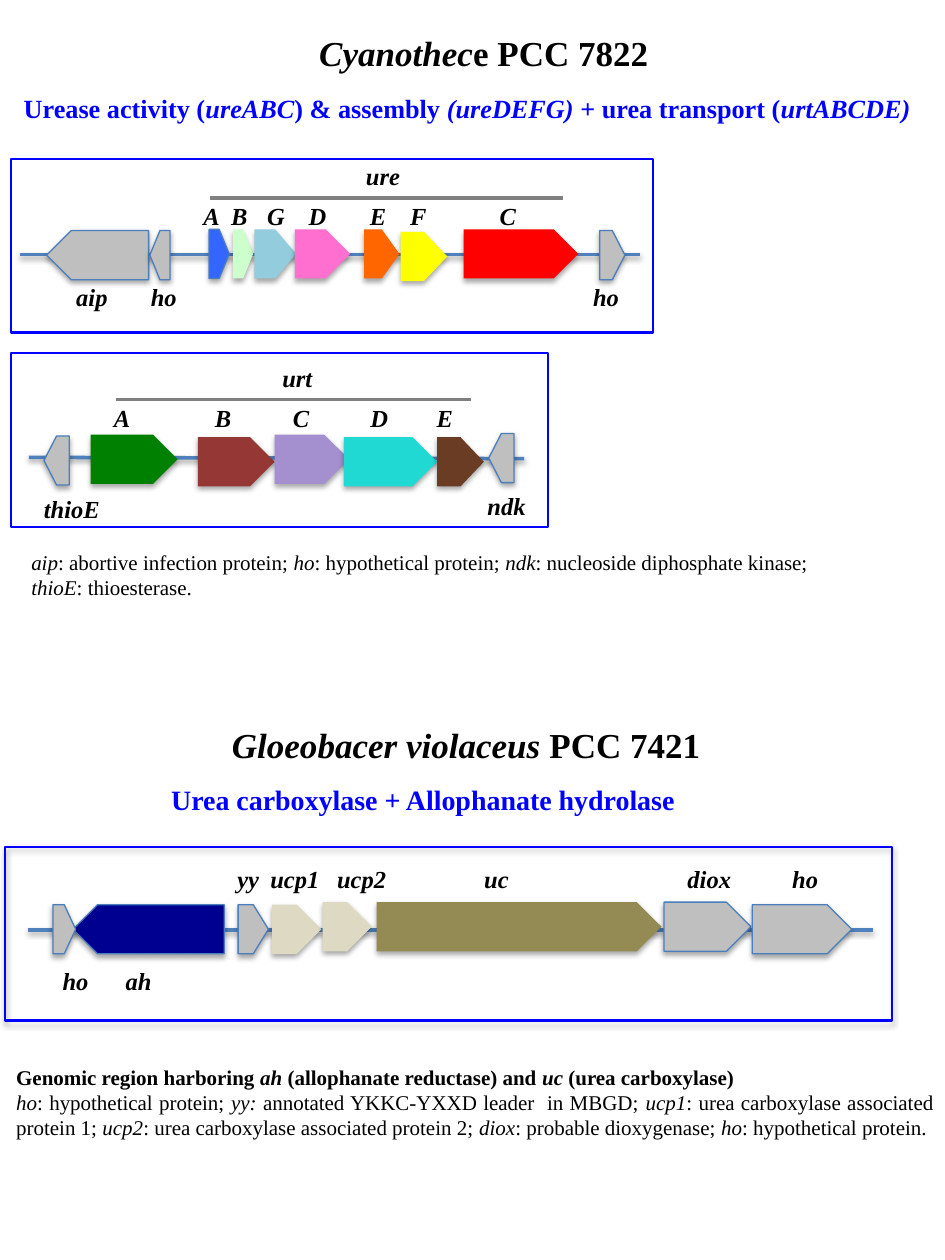
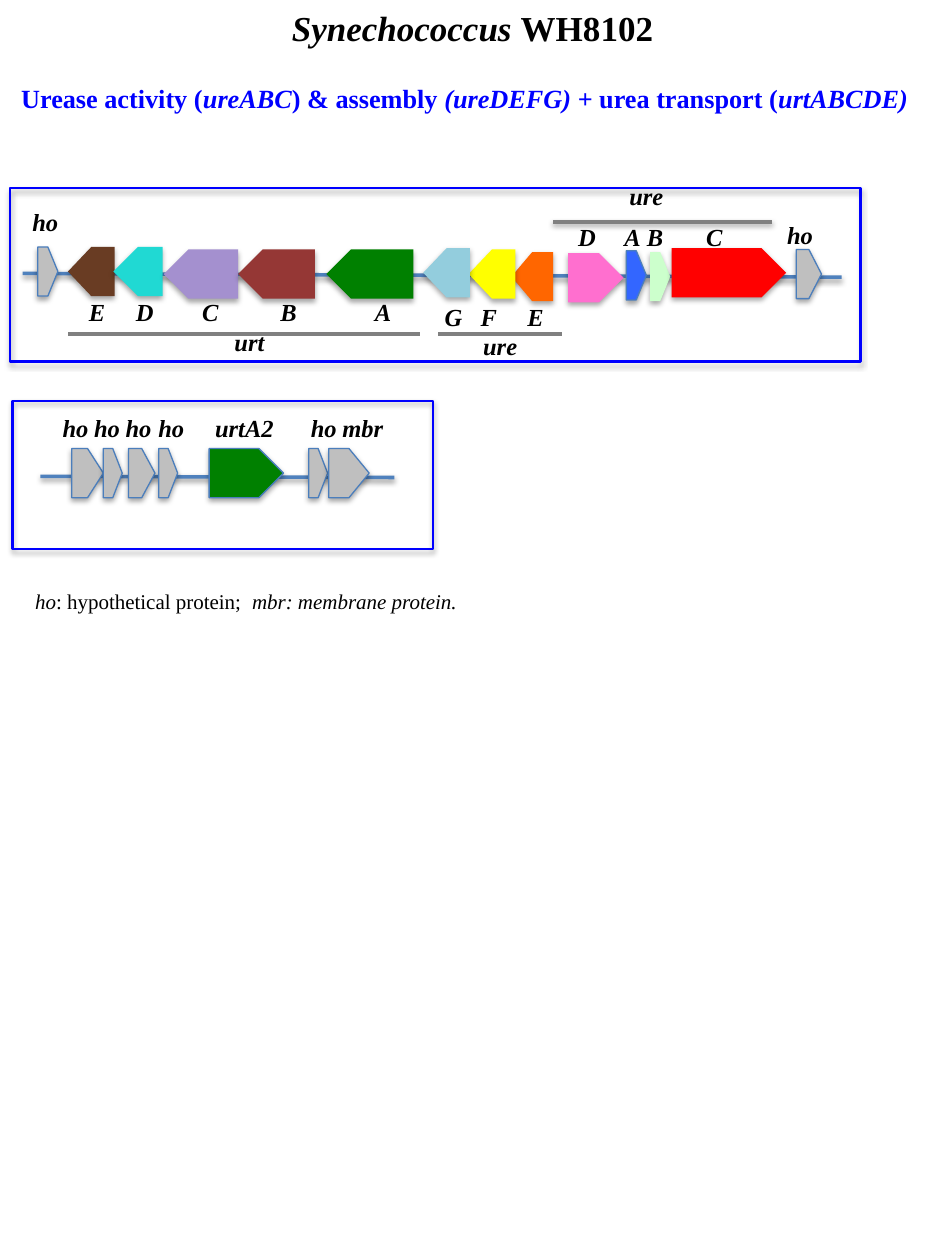
from dataclasses import dataclass

from lxml.etree import SubElement
from pptx import Presentation
from pptx.dml.color import RGBColor
from pptx.enum.shapes import MSO_CONNECTOR, MSO_SHAPE
from pptx.enum.text import MSO_ANCHOR, MSO_AUTO_SIZE, PP_ALIGN
from pptx.oxml.ns import qn
from pptx.util import Inches, Pt

# The slide is a grid of 750 columns by 1000 rows; all places are in its cells.
CELL = Inches(0.01)
COLS, ROWS = 750, 1000
GENE_H, LABEL_W, LABEL_H = 39, 80, 34

FONT = "Times New Roman"
BLACK = RGBColor(0x00, 0x00, 0x00)
BLUE = RGBColor(0x00, 0x00, 0xFF)
STRAND = RGBColor(0x4F, 0x81, 0xBD)
OUTLINE = RGBColor(0x4B, 0x7E, 0xBC)
BAR = RGBColor(0x80, 0x80, 0x80)
GREY = RGBColor(0xBF, 0xBF, 0xBF)
GREEN = RGBColor(0x00, 0x80, 0x00)
SAND = RGBColor(0xDD, 0xD9, 0xC3)

GENE_COLOURS = {
    "ureA": RGBColor(0x33, 0x66, 0xFF),
    "ureB": RGBColor(0xCC, 0xFF, 0xCC),
    "ureC": RGBColor(0xFF, 0x00, 0x00),
    "ureD": RGBColor(0xFF, 0x6F, 0xCF),
    "ureE": RGBColor(0xFF, 0x66, 0x00),
    "ureF": RGBColor(0xFF, 0xFF, 0x00),
    "ureG": RGBColor(0x93, 0xCD, 0xDD),
    "urtA": GREEN,
    "urtA2": GREEN,
    "urtB": RGBColor(0x95, 0x37, 0x35),
    "urtC": RGBColor(0xA4, 0x90, 0xCF),
    "urtD": RGBColor(0x20, 0xD9, 0xD3),
    "urtE": RGBColor(0x69, 0x3C, 0x23),
    "ucp1": SAND,
    "ucp2": SAND,
    "uc": RGBColor(0x94, 0x8A, 0x54),
    "ah": RGBColor(0x00, 0x00, 0x90),
}
OUTLINED = {"ureA", "urtA2", "ah"}

UREASE = ("Urease activity (*ureABC*) & assembly *(ureDEFG) *"
          "+ urea transport (*urtABCDE)*")


@dataclass
class Lane:
    """Genes (name, x, y, width, label centre x) with labels on one row."""
    label_y: int
    genes: list
    left: bool = False


@dataclass
class Region:
    """A framed map; everything inside is relative to its box.

    axis is (x1, y1, x2, y2); a bar is (name, x1, x2, y, label x, label y, shadow).
    """
    box: tuple
    axis: tuple
    lanes: list
    bars: tuple = ()
    shadow: bool = True


CYANOTHECE_URE = Region(
    (9, 126, 509, 138), (7, 76, 499, 76),
    [Lane(110, [("aip", 28, 57, 81, 64), ("ho", 110, 57, 16, 121)], left=True),
     Lane(46, [("ureA", 157, 56, 16, 159), ("ureB", 176, 56, 16, 181),
               ("ureG", 193, 56, 33, 210), ("ureD", 225, 56, 44, 243),
               ("ureE", 280, 56, 28, 291), ("ureF", 309, 58, 37, 323),
               ("ureC", 359, 56, 91, 394)]),
     Lane(110, [("ho", 467, 57, 20, 472)])],
    (("ure", 158, 438, 31, 295, 14, False),), shadow=False)

CYANOTHECE_URT = Region(
    (9, 280, 426, 138), (14, 83, 407, 84),
    [Lane(52, [("urtA", 63, 65, 69, 88), ("urtB", 148, 67, 61, 168),
               ("urtC", 209, 65, 59, 230), ("urtD", 264, 67, 74, 292),
               ("urtE", 338, 67, 37, 344)]),
     Lane(124, [("thioE", 26, 66, 20, 48)], left=True),
     Lane(122, [("ndk", 379, 64, 20, 393)], left=True)],
    (("urt", 83, 365, 37, 227, 20, False),), shadow=False)

GLOEOBACER_UC = Region(
    (4, 672, 704, 138), (18, 66, 689, 66),
    [Lane(26, [("yy", 185, 46, 24, 193), ("ucp1", 212, 46, 39, 230),
               ("ucp2", 252, 44, 39, 283), ("uc", 295, 44, 226, 390),
               ("diox", 523, 44, 69, 559), ("ho", 593, 46, 79, 635)]),
     Lane(107, [("ah", 54, 46, 120, 106)], left=True),
     Lane(107, [("ho", 38, 46, 18, 56)])])

SYNECHOCOCCUS_MAIN = Region(
    (8, 149, 675, 138), (10, 68, 660, 71),
    [Lane(27, [("ho", 22, 47, 16, 28)]),
     Lane(99, [("urtE", 46, 47, 37, 69), ("urtD", 82, 47, 39, 107),
               ("urtC", 122, 49, 59, 159), ("urtB", 181, 49, 61, 221),
               ("urtA", 251, 49, 69, 296)], left=True),
     Lane(103, [("ureE", 398, 51, 33, 417), ("ureF", 364, 49, 37, 380),
                ("ureG", 328, 48, 37, 352)], left=True),
     Lane(39, [("ureD", 443, 52, 44, 458), ("ureA", 489, 50, 16, 494),
               ("ureB", 508, 51, 16, 512), ("ureC", 525, 48, 91, 559)]),
     Lane(38, [("ho", 624, 49, 20, 627)])],
    (("urt", 46, 325, 116, 190, 123, False),
     ("ure", 340, 438, 116, 389, 126, False),
     ("ure", 431, 605, 27, 505, 7, True)))

SYNECHOCOCCUS_URTA2 = Region(
    (10, 318, 334, 118), (22, 60, 303, 61),
    [Lane(22, [("ho", 47, 38, 25, 50), ("ho", 72, 38, 15, 75),
               ("ho", 92, 38, 21, 100), ("ho", 116, 38, 15, 126),
               ("urtA2", 156, 38, 59, 184), ("ho", 235, 38, 15, 247),
               ("mbr", 251, 38, 32, 278)])])


def cells(*values):
    return [round(v * CELL) for v in values]


def set_shadow(sp, visible, alpha=35, dist=1.8):
    """Replace the theme's shadow by a soft one below the shape, or by none."""
    effects = SubElement(sp._element.spPr, qn("a:effectLst"))
    if visible:
        outer = SubElement(effects, qn("a:outerShdw"), blurRad=str(Pt(3.1)),
                           dist=str(Pt(dist)), dir="5400000", rotWithShape="0")
        colour = SubElement(outer, qn("a:srgbClr"), val=str(BLACK))
        SubElement(colour, qn("a:alpha"), val=str(alpha * 1000))


def write(tf, lines, size, colour=BLACK, bold=True, align=PP_ALIGN.LEFT):
    """Fill a text frame; asterisks switch italics on and off."""
    for i, line in enumerate(lines):
        p = tf.add_paragraph() if i else tf.paragraphs[0]
        p.alignment = align
        for j, part in enumerate(line.split("*")):
            if part:
                r = p.add_run()
                r.text = part
                r.font.name, r.font.size = FONT, Pt(size)
                r.font.bold, r.font.italic = bold, j % 2 == 1
                r.font.color.rgb = colour


def add_text(slide, box, lines, size, wrap=True, **style):
    tf = slide.shapes.add_textbox(*cells(*box)).text_frame
    tf.word_wrap = wrap
    write(tf, lines, size, **style)
    return tf


def add_title(slide, box, text):
    title = slide.shapes.title
    title.left, title.top, title.width, title.height = cells(*box)
    tf = title.text_frame
    tf.vertical_anchor = MSO_ANCHOR.TOP
    tf.auto_size = MSO_AUTO_SIZE.NONE
    write(tf, [text], 20, align=PP_ALIGN.CENTER)


def add_subtitle(slide, box, text, size=15):
    add_text(slide, box, [text], size, wrap=False, colour=BLUE)


def add_label(slide, x, y, name):
    """Write a gene or operon name centred on a point."""
    box = (x - LABEL_W / 2, y - LABEL_H / 2, LABEL_W, LABEL_H)
    add_text(slide, box, [f"*{name}*"], 14, wrap=False, align=PP_ALIGN.CENTER)


def add_line(slide, ends, colour, shadow):
    line = slide.shapes.add_connector(MSO_CONNECTOR.STRAIGHT, *cells(*ends))
    line.line.color.rgb = colour
    line.line.width = Pt(2)
    set_shadow(line, shadow, alpha=38, dist=1.6)


def add_gene(slide, x, y, width, name, left):
    sp = slide.shapes.add_shape(MSO_SHAPE.PENTAGON, *cells(x, y, width, GENE_H))
    colour = GENE_COLOURS.get(name, GREY)
    sp.fill.solid()
    sp.fill.fore_color.rgb = colour
    if colour == GREY or name in OUTLINED:
        sp.line.color.rgb = OUTLINE
        sp.line.width = Pt(0.75)
    else:
        sp.line.fill.background()
    if left:
        sp._element.spPr.xfrm.set("flipH", "1")
    set_shadow(sp, True)


def add_region(slide, region):
    left, top, _, _ = region.box
    x1, y1, x2, y2 = region.axis
    add_line(slide, (left + x1, top + y1, left + x2, top + y2), STRAND, True)
    for lane in region.lanes:
        for name, x, y, width, label_x in lane.genes:
            add_gene(slide, left + x, top + y, width, name, lane.left)
            in_operon = name[:3] in ("ure", "urt") and len(name) == 4
            add_label(slide, left + label_x, top + lane.label_y,
                      name[-1] if in_operon else name)
    for name, x1, x2, y, label_x, label_y, shadow in region.bars:
        add_line(slide, (left + x1, top + y, left + x2, top + y), BAR, shadow)
        add_label(slide, left + label_x, top + label_y, name)
    frame = slide.shapes.add_shape(MSO_SHAPE.RECTANGLE, *cells(*region.box))
    frame.fill.background()
    frame.line.color.rgb = BLUE
    frame.line.width = Pt(1.25)
    set_shadow(frame, region.shadow)


def build_cyanothece_and_gloeobacer(slide):
    add_title(slide, (18, 20, 732, 44), "*Cyanothec*e PCC 7822")
    add_subtitle(slide, (9, 68, 736, 35), UREASE)
    add_region(slide, CYANOTHECE_URE)
    add_region(slide, CYANOTHECE_URT)
    add_text(slide, (15, 431, 644, 50),
             ["*aip*: abortive infection protein; *ho*: hypothetical protein; "
              "*ndk*: nucleoside diphosphate kinase;",
              "*thioE*: thioesterase."], 12, wrap=False, bold=False)

    add_text(slide, (-5, 569, 750, 44), ["*Gloeobacer violaceus *PCC 7421"], 20,
             align=PP_ALIGN.CENTER)
    add_subtitle(slide, (126, 616, 425, 37),
                 "Urea carboxylase + Allophanate hydrolase", 16)
    add_region(slide, GLOEOBACER_UC)
    tf = add_text(
        slide, (3, 840, 748, 71),
        ["Genomic region harboring* ah *(allophanate reductase) and "
         "*uc *(urea carboxylase)",
         "*ho*: hypothetical protein; *yy:* annotated YKKC-YXXD leader  in MBGD; "
         "*ucp1*: urea carboxylase associated protein 1; "
         "*ucp2*: urea carboxylase associated protein 2; "
         "*diox*: probable dioxygenase; *ho*: hypothetical protein."],
        12, bold=False, align=PP_ALIGN.JUSTIFY)
    for r in tf.paragraphs[0].runs:
        r.font.bold = True


def build_synechococcus(slide):
    add_title(slide, (0, 0, 750, 44), "*Synechococcus *WH8102")
    add_subtitle(slide, (7, 60, 736, 35), UREASE)
    add_region(slide, SYNECHOCOCCUS_MAIN)
    add_region(slide, SYNECHOCOCCUS_URTA2)
    add_text(slide, (18, 462, 665, 50),
             ["*ho*: hypothetical protein;  *mbr: membrane protein.*"], 12,
             bold=False)


def main():
    prs = Presentation()
    prs.slide_width, prs.slide_height = cells(COLS, ROWS)
    title_only = prs.slide_layouts[5]
    for build in (build_cyanothece_and_gloeobacer, build_synechococcus):
        build(prs.slides.add_slide(title_only))
    prs.save("out.pptx")


if __name__ == "__main__":
    main()
